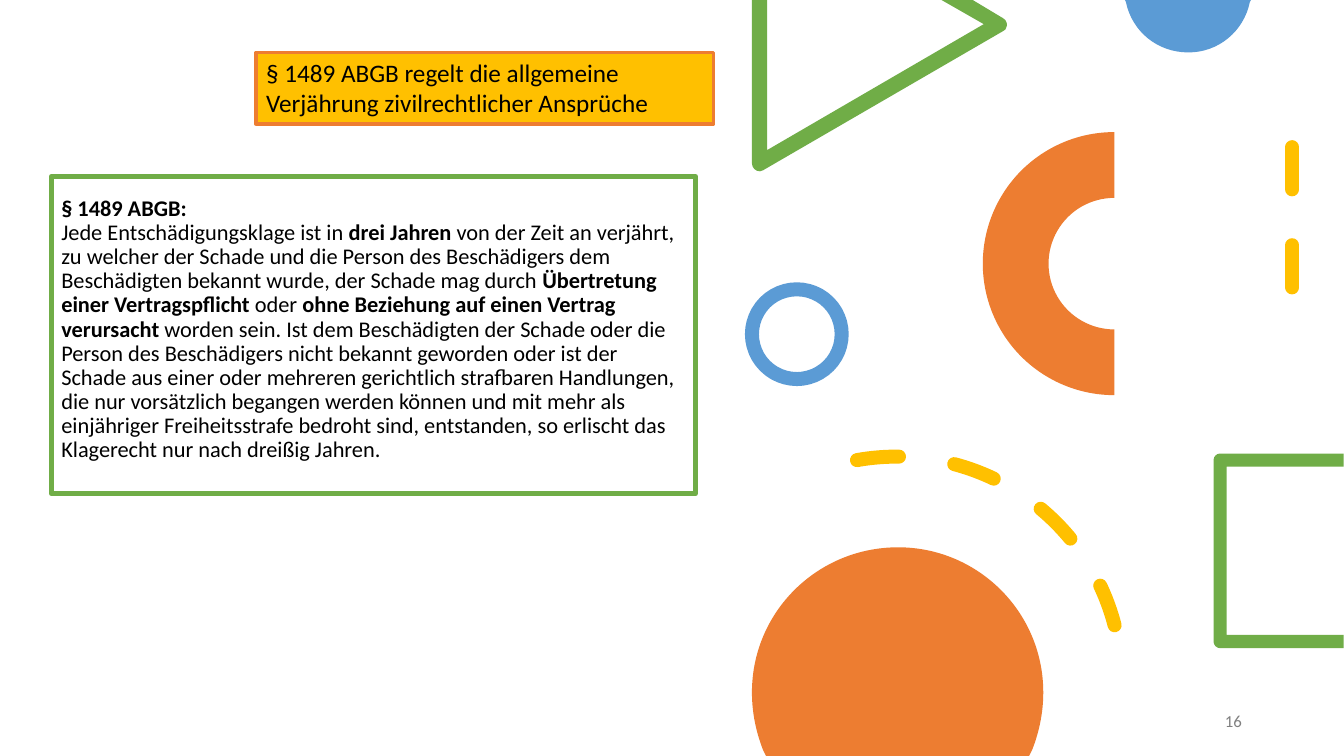
from dataclasses import dataclass
from typing import Any, NamedTuple

from lxml.etree import SubElement
from pptx import Presentation
from pptx.dml.color import RGBColor
from pptx.enum.dml import MSO_LINE_DASH_STYLE as Dash
from pptx.enum.shapes import MSO_CONNECTOR as Connector, MSO_SHAPE as Shape
from pptx.enum.text import MSO_ANCHOR as Anchor, MSO_AUTO_SIZE as AutoSize, PP_ALIGN as Align
from pptx.oxml.ns import qn
from pptx.util import Inches, Pt


@dataclass(frozen=True)
class Theme:
    font: str = "Calibri"
    blue: str = "5B9BD5"
    orange: str = "ED7D31"
    green: str = "70AD47"
    yellow: str = "FFC000"
    black: str = "000000"
    gray: str = "808080"
    title_size: int = 18
    body_size: int = 16
    number_size: int = 12
    thick_line: float = 10
    body_line: float = 3.5
    title_line: float = 2.5


class Box(NamedTuple):
    left: float
    top: float
    width: float
    height: float


class Span(NamedTuple):
    text: str
    bold: bool = False


class Outline(NamedTuple):
    color: str
    start: tuple[float, float]
    segments: list[tuple[float, ...]]


class Ornament(NamedTuple):
    kind: Shape
    box: Box
    fill: str | None = None
    line: str | None = None
    rotation: float = 0
    dashed: bool = False


THEME = Theme()

OUTLINES = [
    Outline(THEME.blue, (11.16, 0), [
        (12.41, 0), (12.4, 0.02),
        (12.34, 0.31, 12.09, 0.52, 11.79, 0.52),
        (11.48, 0.52, 11.23, 0.31, 11.17, 0.02)]),
    Outline(THEME.green, (7.46, 0), [
        (7.61, 0), (7.61, 1.49), (9.76, 0.24), (9.34, 0), (9.65, 0), (9.95, 0.18),
        (9.99, 0.2, 10, 0.25, 9.98, 0.28), (9.98, 0.29, 9.97, 0.3, 9.95, 0.31),
        (7.57, 1.69), (7.56, 1.69, 7.55, 1.7, 7.54, 1.7),
        (7.49, 1.7, 7.46, 1.66, 7.46, 1.62)]),
    Outline(THEME.green, (12.1, 4.5), [
        (13.33, 4.5), (13.33, 4.63), (12.17, 4.63), (12.17, 6.3), (13.33, 6.3),
        (13.33, 6.43), (12.1, 6.43), (12.07, 6.43, 12.04, 6.4, 12.04, 6.37),
        (12.04, 4.56), (12.04, 4.53, 12.07, 4.5, 12.1, 4.5)]),
    Outline(THEME.orange, (8.91, 5.43), [
        (9.7, 5.43, 10.35, 6.07, 10.35, 6.87), (10.35, 7.07, 10.31, 7.26, 10.24, 7.44),
        (10.21, 7.5), (7.6, 7.5), (7.57, 7.44),
        (7.5, 7.26, 7.46, 7.07, 7.46, 6.87), (7.46, 6.07, 8.11, 5.43, 8.91, 5.43)]),
]

ORNAMENTS = [
    Ornament(Shape.OVAL, Box(7.46, 2.87, 0.89, 0.89), line=THEME.blue),
    Ornament(Shape.BLOCK_ARC, Box(9.75, 1.31, 2.61, 2.61), fill=THEME.orange, rotation=270),
    Ornament(Shape.ARC, Box(6.66, 4.53, 4.47, 4.47), line=THEME.yellow, rotation=349.9, dashed=True),
]

TITLE = [Span("§ 1489 ABGB regelt die allgemeine Verjährung zivilrechtlicher Ansprüche")]
STATUTE = [
    Span("§ 1489 ABGB:\n", True),
    Span("Jede Entschädigungsklage ist in "),
    Span("drei Jahren ", True),
    Span("von der Zeit an verjährt, zu welcher der Schade und die Person des Beschädigers "
         "dem Beschädigten bekannt wurde, der Schade mag durch "),
    Span("Übertretung einer Vertragspflicht ", True),
    Span("oder "),
    Span("ohne Beziehung auf einen Vertrag verursacht ", True),
    Span("worden sein. Ist dem Beschädigten der Schade oder die Person des Beschädigers nicht "
         "bekannt geworden oder ist der Schade aus einer oder mehreren gerichtlich strafbaren "
         "Handlungen, die nur vorsätzlich begangen werden können und mit mehr als einjähriger "
         "Freiheitsstrafe bedroht sind, entstanden, so erlischt das Klagerecht nur nach "
         "dreißig Jahren."),
]


def apply(target: Any, values: dict[str, Any]) -> None:
    for name, value in values.items():
        setattr(target, name, value)


def paint(shape: Any, fill: str | None = None, line: str | None = None, width: float = 0) -> None:
    if fill:
        shape.fill.solid()
        shape.fill.fore_color.rgb = RGBColor.from_string(fill)
    else:
        shape.fill.background()
    if line:
        stroke(shape, line, width)
    else:
        shape.line.fill.background()


def stroke(shape: Any, color: str, width: float, dashed: bool = False) -> None:
    shape.line.color.rgb = RGBColor.from_string(color)
    shape.line.width = Pt(width)
    if dashed:
        shape.line.dash_style = Dash.DASH
        shape._element.spPr.find(qn("a:ln")).set("cap", "rnd")


def write(shape: Any, spans: list[Span], size: int, color: str,
          frame_format: dict[str, Any], para_format: dict[str, Any]) -> None:
    frame = shape.text_frame
    apply(frame, {"word_wrap": True, **frame_format})
    para = frame.paragraphs[0]
    apply(para, para_format)
    for span in spans:
        run = para.add_run()
        run.text = span.text.rstrip("\n")
        apply(run.font, {"name": THEME.font, "size": Pt(size), "bold": span.bold})
        run.font.color.rgb = RGBColor.from_string(color)
        if span.text.endswith("\n"):
            para.add_line_break()


def bend(edge: Any, controls: list[tuple[float, float]], shape: Any) -> None:
    edge.tag = qn("a:cubicBezTo")
    for index, (x, y) in enumerate(controls):
        point = SubElement(edge, qn("a:pt"))
        point.set("x", str(Inches(x) - shape.left))
        point.set("y", str(Inches(y) - shape.top))
        edge.insert(index, point)


def draw_outline(page: Any, outline: Outline) -> None:
    builder = page.shapes.build_freeform(*map(Inches, outline.start))
    ends = [tuple(map(Inches, segment[-2:])) for segment in outline.segments]
    builder.add_line_segments(ends, close=True)
    shape = builder.convert_to_shape()
    edges = list(shape._element.spPr.iter(qn("a:lnTo")))
    for edge, segment in zip(edges, outline.segments):
        if len(segment) == 6:
            bend(edge, [segment[:2], segment[2:4]], shape)
    shape.shadow.inherit = False
    paint(shape, fill=outline.color)


def draw_ornament(page: Any, item: Ornament) -> Any:
    shape = page.shapes.add_shape(item.kind, *map(Inches, item.box))
    shape.shadow.inherit = False
    shape.rotation = item.rotation
    paint(shape, item.fill, item.line, THEME.thick_line)
    if item.dashed:
        stroke(shape, item.line, THEME.thick_line, dashed=True)
    return shape


def draw_dashed_line(page: Any, x: float, top: float, bottom: float) -> None:
    line = page.shapes.add_connector(Connector.STRAIGHT, *map(Inches, (x, top, x, bottom)))
    stroke(line, THEME.yellow, THEME.thick_line, dashed=True)
    SubElement(line._element.spPr, qn("a:effectLst"))


def main() -> None:
    deck = Presentation()
    apply(deck, {"slide_width": Inches(40 / 3), "slide_height": Inches(7.5)})
    page = deck.slides.add_slide(deck.slide_layouts[5])

    for outline in OUTLINES:
        draw_outline(page, outline)
    for item in ORNAMENTS:
        draw_ornament(page, item)
    draw_dashed_line(page, 12.82, 1.46, 3.2)

    title = page.shapes.title
    apply(title, dict(zip(Box._fields, map(Inches, Box(2.54, 0.52, 4.54, 0.71)))))
    paint(title, THEME.yellow, THEME.orange, THEME.title_line)
    write(title, TITLE, THEME.title_size, THEME.black,
          {"vertical_anchor": Anchor.TOP, "auto_size": AutoSize.NONE},
          {"alignment": Align.LEFT})

    statute = draw_ornament(page, Ornament(Shape.RECTANGLE, Box(0.51, 1.75, 6.39, 3.15)))
    paint(statute, line=THEME.green, width=THEME.body_line)
    write(statute, STATUTE, THEME.body_size, THEME.black,
          {"vertical_anchor": Anchor.BOTTOM, "margin_bottom": Inches(0.31)},
          {"alignment": Align.LEFT, "line_spacing": 0.9})

    number = page.shapes.add_textbox(*map(Inches, Box(10.78, 6.95, 1.64, 0.4)))
    write(number, [Span("16")], THEME.number_size, THEME.gray,
          {"vertical_anchor": Anchor.MIDDLE},
          {"alignment": Align.RIGHT, "space_after": Pt(6)})

    deck.save("out.pptx")


if __name__ == "__main__":
    main()
